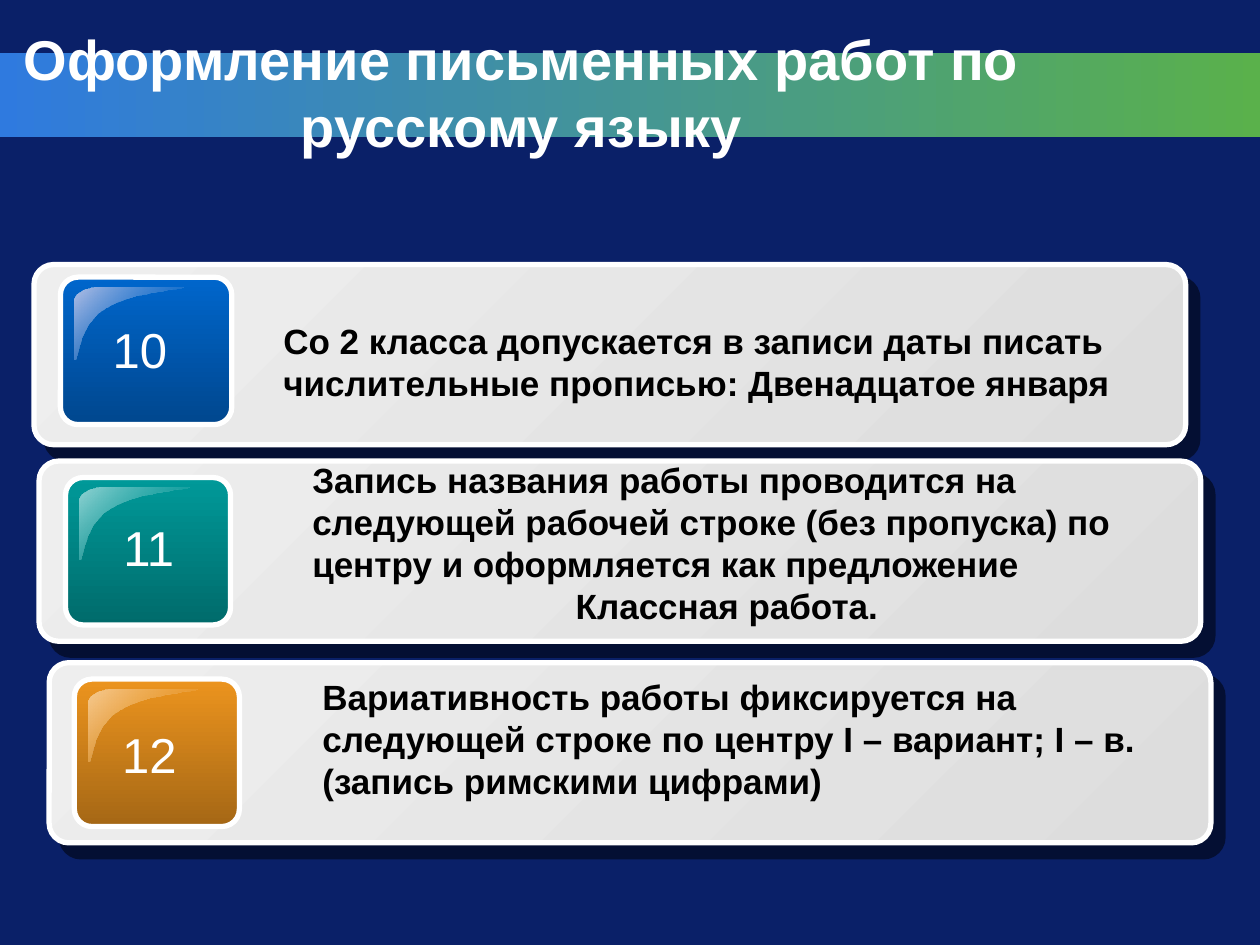
from lxml.etree import SubElement
from pptx import Presentation
from pptx.dml.color import RGBColor as Rgb
from pptx.enum.shapes import MSO_SHAPE as Kind
from pptx.enum.text import MSO_ANCHOR as Anchor, MSO_AUTO_SIZE as Fit, PP_ALIGN as Align
from pptx.oxml.ns import qn
from pptx.util import Inches, Pt

NAVY = Rgb(0x0A, 0x20, 0x68)
WHITE = Rgb(0xFF, 0xFF, 0xFF)
BLACK = Rgb(0, 0, 0)
BAND = (Rgb(0x2F, 0x7A, 0xDF), Rgb(0x5A, 0xB1, 0x4B))
GREY = (Rgb(0xEE, 0xEE, 0xEE), Rgb(0xDD, 0xDD, 0xDD))
BLUE = (Rgb(0x00, 0x66, 0xCC), Rgb(0x00, 0x47, 0x8E))
TEAL = (Rgb(0x00, 0x99, 0x99), Rgb(0x00, 0x6B, 0x6B))
GOLD = (Rgb(0xEC, 0x94, 0x1E), Rgb(0xA5, 0x67, 0x15))
SHINE = (Rgb(0xB5, 0xC0, 0xE5), Rgb(0x93, 0xD4, 0xD4), Rgb(0xF6, 0xCB, 0x92))

CURVES = (
    ((0.18, 0), (0.08, 0), (0, 0.05), (0, 0.11)),
    ((0, 0.57), (0.04, 0.58), (0.02, 0.3), (0.24, 0.17)),
    ((0.24, 0.17), (0.46, 0.03), (0.88, 0.02), (0.87, 0)),
)

ROWS = (
    (BLUE, SHINE[0], (0.27, 2.1, 9.14), (0.48, 2.2, 1.36),
     "10", (0.79, 2.49, 0.64), (2.15, 2.49, 7.05, 0.77),
     ("Со 2 класса допускается в записи даты писать числительные прописью: "
      "Двенадцатое января",)),
    (TEAL, SHINE[1], (0.31, 3.66, 9.22), (0.52, 3.79, 1.31),
     "11", (0.87, 4.06, 0.62), (2.38, 3.59, 6.78, 1.78),
     ("Запись названия работы проводится на следующей рабочей строке "
      "(без пропуска) по центру и оформляется как предложение",
      "Классная работа.")),
    (GOLD, SHINE[2], (0.39, 5.26, 9.22), (0.59, 5.39, 1.31),
     "12", (0.71, 5.7, 0.95), (2.46, 5.31, 6.78, 1.1),
     ("Вариативность работы фиксируется на следующей строке по центру "
      "I – вариант; I – в. (запись римскими цифрами)",)),
)


def bend(curve, steps=12):
    """Return points along a cubic curve."""
    def mix(axis, t):
        a, b, c, d = (point[axis] for point in curve)
        s = 1 - t
        return s**3 * a + 3 * s * s * t * b + 3 * s * t * t * c + t**3 * d
    return [(mix(0, i / steps), mix(1, i / steps)) for i in range(steps + 1)]


class Page:
    """Hold the style and the current slide."""

    font = "Arial"

    def __init__(self, deck):
        self.slide = deck.slides.add_slide(deck.slide_layouts[5])
        self.shapes = self.slide.shapes
        back = self.slide.background.fill
        back.solid()
        back.fore_color.rgb = NAVY

    def style(self, para, size, color, bold, align):
        para.alignment = align
        font = para.font
        font.name, font.size, font.bold = self.font, Pt(size), bold
        font.color.rgb = color

    def blend(self, shape, colors, angle):
        shape.shadow.inherit = False
        shape.fill.gradient()
        shape.fill.gradient_angle = 360 - angle
        for stop, color in zip(shape.fill.gradient_stops, colors):
            stop.color.rgb = color

    def title(self, text):
        box = self.shapes.title
        box.left, box.top = Inches(0), Inches(0.42)
        box.width, box.height = Inches(8.28), Inches(0.62)
        frame = box.text_frame
        frame.text = text
        frame.auto_size = Fit.NONE
        frame.vertical_anchor = Anchor.MIDDLE
        self.style(frame.paragraphs[0], 32, WHITE, True, Align.CENTER)

    def band(self):
        bar = self.shapes.add_shape(
            Kind.RECTANGLE, Inches(0), Inches(0.42), Inches(10), Inches(0.67))
        self.blend(bar, BAND, 0)
        bar.line.fill.background()
        tree = bar.element.getparent()
        tree.remove(bar.element)
        tree.insert(2, bar.element)

    def card(self, place, height, round_by, colors, angle):
        x, y, w = place
        card = self.shapes.add_shape(
            Kind.ROUNDED_RECTANGLE, Inches(x), Inches(y), Inches(w), Inches(height))
        card.adjustments[0] = round_by
        self.blend(card, colors, angle)
        card.line.color.rgb = WHITE
        card.line.width = Pt(3)
        return card

    def shade(self, shape):
        effects = shape.element.spPr.find(qn("a:effectLst"))
        shadow = SubElement(effects, qn("a:outerShdw"), dist=str(Pt(10.6)),
                            dir=str(49 * 60000), algn="ctr", rotWithShape="0")
        color = SubElement(shadow, qn("a:srgbClr"), val=str(BLACK))
        SubElement(color, qn("a:alpha"), val="50000")

    def gloss(self, x, y, colors):
        points = [(Inches(x + dx), Inches(y + dy))
                  for curve in CURVES for dx, dy in bend(curve)]
        pen = self.shapes.build_freeform(*points[0])
        pen.add_line_segments(points[1:], close=True)
        shape = pen.convert_to_shape()
        self.blend(shape, colors, 45)
        shape.line.fill.background()
        clear = shape.element.spPr.findall(".//" + qn("a:srgbClr"))[-1]
        SubElement(clear, qn("a:alpha"), val="0")

    def text(self, place, lines, size, color, bold, aligns, wrap):
        box = self.shapes.add_textbox(*map(Inches, place))
        frame = box.text_frame
        frame.word_wrap = wrap
        frame.text = "\n".join(lines)
        for para, align in zip(frame.paragraphs, aligns):
            self.style(para, size, color, bold, align)

    def row(self, hues, shine, panel, tile, number, spot, area, lines):
        self.shade(self.card(panel, 1.43, 0.109, GREY, 45))
        self.card(tile, 1.17, 0.119, hues, 90)
        self.gloss(tile[0] + 0.11, tile[1] + 0.08, (shine, hues[0]))
        self.text((*spot, 0.57), [number], 28, WHITE, False, [Align.CENTER], False)
        self.text(area, lines, 20, BLACK, True, [Align.LEFT, Align.CENTER], True)


def main():
    deck = Presentation()
    deck.slide_width, deck.slide_height = Inches(10), Inches(7.5)
    page = Page(deck)
    page.band()
    page.title("Оформление письменных работ по русскому языку")
    for row in ROWS:
        page.row(*row)
    deck.save("out.pptx")


if __name__ == "__main__":
    main()
